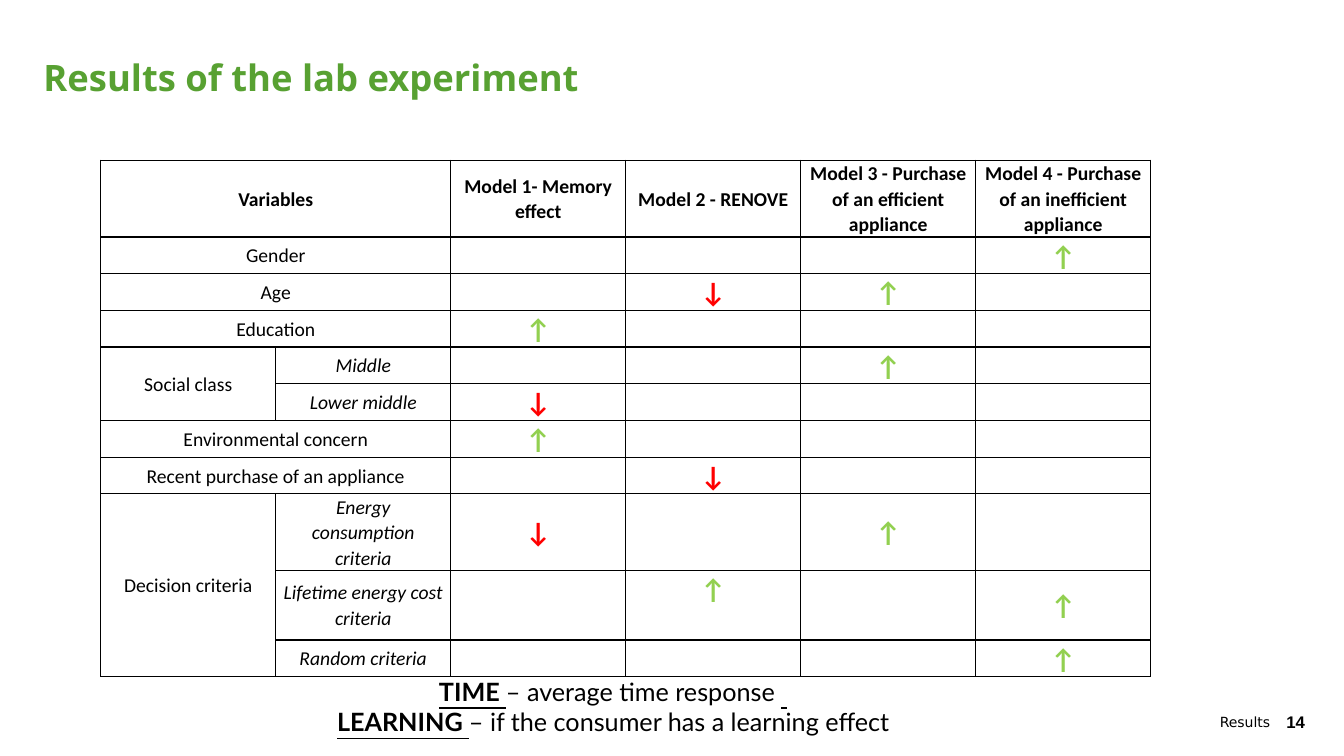
"""Build the slide with the table of lab experiment results."""
from lxml.etree import SubElement
from pptx import Presentation
from pptx.dml.color import RGBColor
from pptx.enum.text import MSO_ANCHOR, PP_ALIGN
from pptx.oxml.ns import qn
from pptx.util import Cm, Pt

BLACK = RGBColor(0, 0, 0)
THEME = {
    "title": {"name": "Open Sans", "size": Pt(26), "bold": True, "color": RGBColor(0x58, 0xA1, 0x32)},
    "heading": {"name": "Calibri", "size": Pt(14), "bold": True, "color": BLACK},
    "variable": {"name": "Calibri", "size": Pt(14), "bold": False, "color": BLACK},
    "detail": {"name": "Calibri", "size": Pt(14), "italic": True, "color": BLACK},
    "↑": {"name": "Calibri", "size": Pt(20), "bold": True, "color": RGBColor(0x92, 0xD0, 0x50)},
    "↓": {"name": "Calibri", "size": Pt(20), "bold": True, "color": RGBColor(0xFF, 0, 0)},
    "term": {"name": "Lato", "size": Pt(18), "bold": True, "underline": True, "color": BLACK},
    "meaning": {"name": "Lato", "size": Pt(18), "color": BLACK},
    "number": {"name": "Arial", "size": Pt(12), "bold": True, "color": BLACK},
    "footer": {"name": "DejaVu Sans", "size": Pt(10), "color": BLACK},
}


def add_span(para, text, style):
    """Add a run in one of the theme styles."""
    span = para.add_run()
    span.text = text
    for key, value in THEME[style].items():
        if key == "color":
            span.font.color.rgb = value
        else:
            setattr(span.font, key, value)


def add_box(page, left, top, width, height, anchor):
    """Add a wrapping text box and return its text frame."""
    frame = page.shapes.add_textbox(Cm(left), Cm(top), Cm(width), Cm(height)).text_frame
    frame.word_wrap = True
    frame.vertical_anchor = anchor
    return frame


deck = Presentation()
deck.slide_width, deck.slide_height = Cm(33.87), Cm(19.05)
page = deck.slides.add_slide(deck.slide_layouts[5])

title = page.shapes.title
title.left, title.top, title.width, title.height = Cm(0.84), Cm(0.84), Cm(32.18), Cm(2.21)
title.text_frame.vertical_anchor = MSO_ANCHOR.MIDDLE
title_para = title.text_frame.paragraphs[0]
title_para.alignment = PP_ALIGN.LEFT
add_span(title_para, "Results of the lab experiment", "title")

MODELS = [
    "Model 1- Memory effect",
    "Model 2 - RENOVE",
    "Model 3 - Purchase of an efficient appliance",
    "Model 4 - Purchase of an inefficient appliance",
]
EFFECTS = [
    ("Gender", "", {4: "↑"}),
    ("Age", "", {2: "↓", 3: "↑"}),
    ("Education", "", {1: "↑"}),
    ("Social class", "Middle", {3: "↑"}),
    ("", "Lower middle", {1: "↓"}),
    ("Environmental concern", "", {1: "↑"}),
    ("Recent purchase of an appliance", "", {2: "↓"}),
    ("Decision criteria", "Energy consumption criteria", {1: "↓", 3: "↑"}),
    ("", "Lifetime energy cost criteria", {2: "↑", 4: "↑"}),
    ("", "Random criteria", {4: "↑"}),
]
ROW_HEIGHTS = [1.83] + [0.89] * 7 + [1.75, 1.75, 0.89]

entries = {(0, 0): ("Variables", "heading")}
for column, model in enumerate(MODELS, 2):
    entries[0, column] = (model, "heading")
for row, (variable, detail, arrows) in enumerate(EFFECTS, 1):
    entries[row, 0] = (variable, "variable")
    entries[row, 1] = (detail, "detail")
    for model_number, arrow in arrows.items():
        entries[row, model_number + 1] = (arrow, arrow)

table = page.shapes.add_table(len(ROW_HEIGHTS), 6, Cm(2.54), Cm(4.04), Cm(26.44), Cm(12.6)).table
table.first_row = table.horz_banding = False
for column in table.columns:
    column.width = Cm(4.41)
for row, height in enumerate(ROW_HEIGHTS):
    table.rows[row].height = Cm(height)
    for column in range(6):
        cell = table.cell(row, column)
        cell.margin_left = cell.margin_right = Cm(0.18)
        cell.margin_top = cell.margin_bottom = 0
        cell.vertical_anchor = MSO_ANCHOR.MIDDLE
        for edge in ("a:lnL", "a:lnR", "a:lnT", "a:lnB"):
            line = SubElement(cell._tc.get_or_add_tcPr(), qn(edge), w=str(Pt(1)))
            SubElement(SubElement(line, qn("a:solidFill")), qn("a:srgbClr"), val=str(BLACK))
        cell.fill.background()
        para = cell.text_frame.paragraphs[0]
        para.alignment = PP_ALIGN.CENTER
        para.line_spacing = 1.07
        text, style = entries.get((row, column), ("", ""))
        if text:
            add_span(para, text, style)
    if not entries.get((row, 1), ("", ""))[0]:
        table.cell(row, 0).merge(table.cell(row, 1))
for first, last in [(4, 5), (8, 10)]:
    table.cell(first, 0).merge(table.cell(last, 0))
table.cell(9, 3).vertical_anchor = MSO_ANCHOR.TOP

for text, style, left, width in [("14", "number", 30.73, 2.41), ("Results", "footer", 0.13, 32.13)]:
    para = add_box(page, left, 17.53, width, 1.32, MSO_ANCHOR.MIDDLE).paragraphs[0]
    para.alignment = PP_ALIGN.RIGHT
    add_span(para, text, style)

legend = add_box(page, 1.93, 16.92, 27.05, 1.8, MSO_ANCHOR.TOP)
time_para, learning_para = legend.paragraphs[0], legend.add_paragraph()
time_para.alignment = learning_para.alignment = PP_ALIGN.CENTER
add_span(time_para, "TIME ", "term")
add_span(time_para, "– average time response ", "meaning")
add_span(time_para, " ", "term")
add_span(learning_para, "LEARNING ", "term")
add_span(learning_para, "– if the consumer has a learning effect", "meaning")

deck.save("out.pptx")
